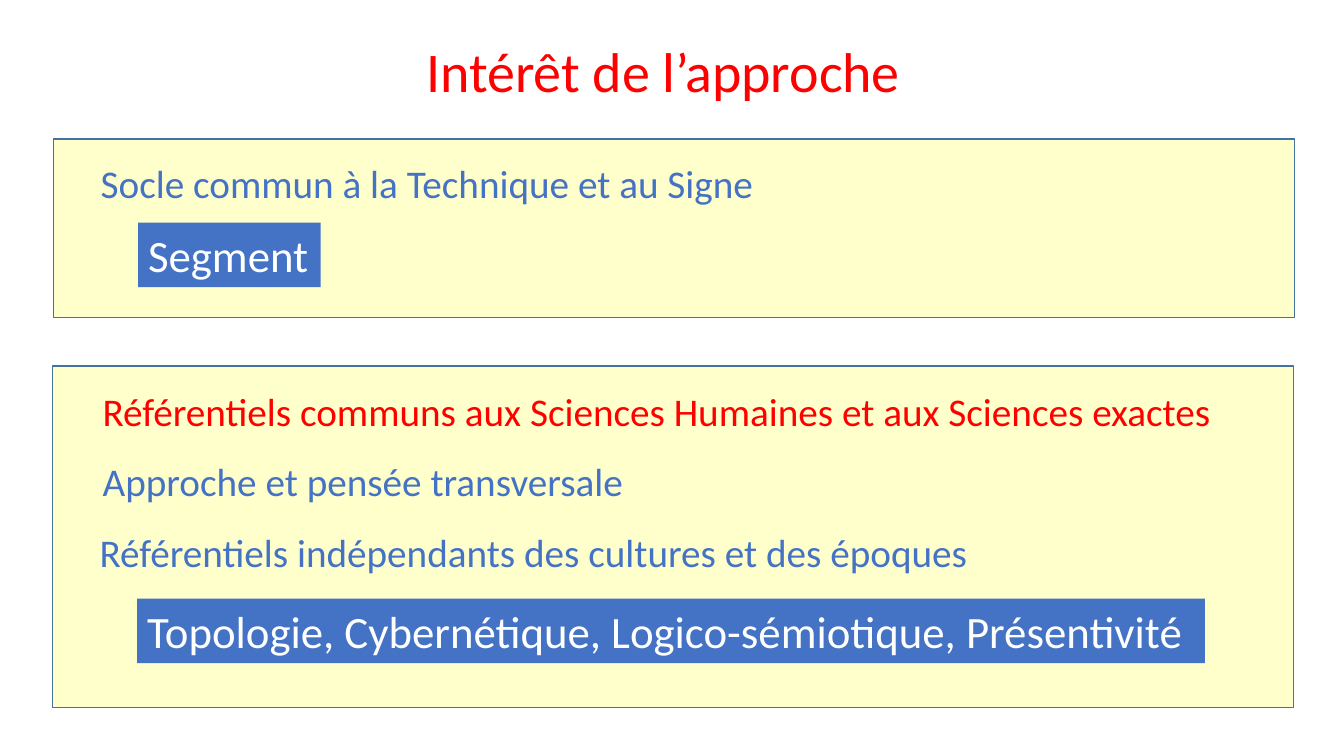
from pptx import Presentation
from pptx.dml.color import RGBColor
from pptx.enum import shapes, text
from pptx.util import Inches, Pt

THEME = {
    "font": "Calibri",
    "red": RGBColor.from_string("FF0000"),
    "blue": RGBColor.from_string("4472C4"),
    "white": RGBColor.from_string("FFFFFF"),
    "panel": RGBColor.from_string("FFFFCC"),
    "border": RGBColor.from_string("43739E"),
    "title": Pt(40),
    "body": Pt(28),
    "label": Pt(32),
}


def add_box(left, top, width, height, fill):
    sp = s.shapes.add_shape(shapes.MSO_SHAPE.RECTANGLE, Inches(left), Inches(top),
                            Inches(width), Inches(height))
    sp.shadow.inherit = False
    sp.fill.solid()
    sp.fill.fore_color.rgb = THEME[fill]
    return sp


def write(sp, words, size, color):
    tf = sp.text_frame
    tf.text = words
    tf.auto_size = text.MSO_AUTO_SIZE.SHAPE_TO_FIT_TEXT
    p = tf.paragraphs[0]
    p.alignment = text.PP_ALIGN.LEFT
    r = p.runs[0]
    r.font.name = THEME["font"]
    r.font.size = THEME[size]
    r.font.color.rgb = THEME[color]
    return tf


prs = Presentation()
prs.slide_width = Inches(13.33)
prs.slide_height = Inches(7.5)
s = prs.slides.add_slide(prs.slide_layouts[6])

for left, top, height in [(0.53, 1.38, 1.77), (0.52, 3.63, 3.39)]:
    panel = add_box(left, top, 12.31, height, "panel")
    panel.line.color.rgb = THEME["border"]
    panel.line.width = Pt(1)

lines = [
    ("Intérêt de l’approche", 4.13, 0.31, 5.08, 0.77, "title", "red"),
    ("Socle commun à la Technique et au Signe", 0.9, 1.53, 6.74, 0.57, "body", "blue"),
    ("Référentiels communs aux Sciences Humaines et aux Sciences exactes",
     0.92, 3.79, 11.31, 0.57, "body", "red"),
    ("Approche et pensée transversale", 0.92, 4.49, 5.42, 0.57, "body", "blue"),
    ("Référentiels indépendants des cultures et des époques",
     0.89, 5.19, 8.91, 0.57, "body", "blue"),
]
for words, left, top, width, height, size, color in lines:
    sp = s.shapes.add_textbox(Inches(left), Inches(top), Inches(width), Inches(height))
    tf = write(sp, words, size, color)
    tf.word_wrap = False

labels = [
    ("Segment", 1.37, 2.21, 1.81),
    ("Topologie, Cybernétique, Logico-sémiotique, Présentivité", 1.36, 5.94, 10.59),
]
for words, left, top, width in labels:
    sp = add_box(left, top, width, 0.64, "blue")
    sp.line.fill.background()
    tf = write(sp, words, "label", "white")
    tf.word_wrap = True
    tf.margin_right = Inches(0.05)

prs.save("out.pptx")
